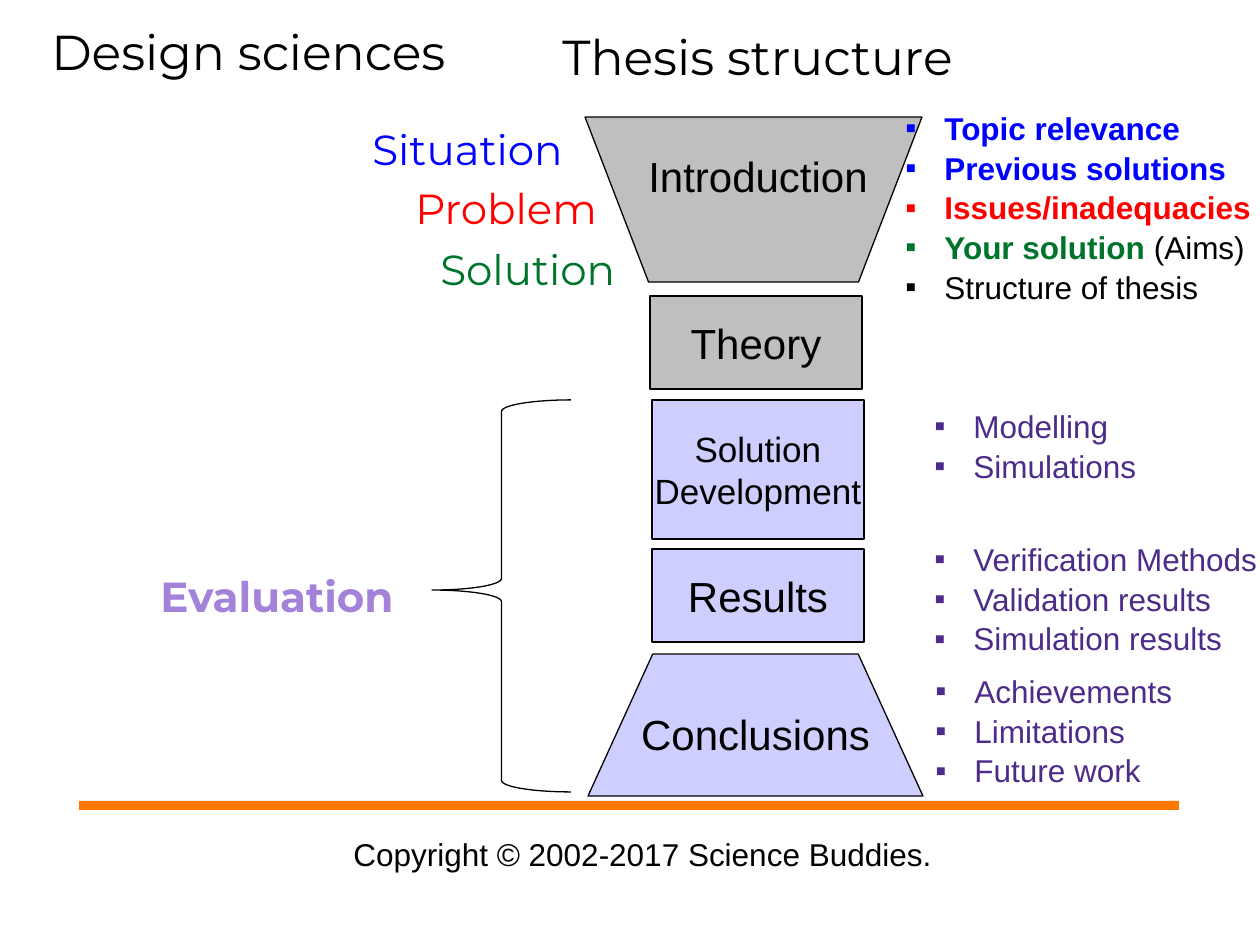
"""Build a slide that maps design-science stages to the structure of a thesis."""
import pptx
import pptx.dml.color
import pptx.enum.shapes
import pptx.enum.text
import pptx.oxml
import pptx.oxml.ns
import pptx.util

SHAPE = pptx.enum.shapes.MSO_SHAPE
ALIGN = pptx.enum.text.PP_ALIGN
ANCHOR = pptx.enum.text.MSO_ANCHOR

PX = 914400 / 126
BULLET_INDENT = 39
BLACK, WHITE, ORANGE = "000000", "FFFFFF", "FF7900"
GREY, LAVENDER = "BFBFBF", "CFCFFF"
BLUE, RED, GREEN = "0000FF", "FF0000", "00742C"
PURPLE, LILAC = "4D2B89", "A283D9"

HEADINGS = [
    ("Design sciences", (39, 15, 467, 72), ALIGN.LEFT),
    ("Thesis structure", (495, 20, 525, 72), ALIGN.CENTER),
]
STAGES = [
    ("Situation", (360, 117, 252, 63), BLUE, False),
    ("Problem", (403, 176, 252, 63), RED, False),
    ("Solution", (428, 237, 252, 63), GREEN, False),
    ("Evaluation", (148, 564, 268, 63), LILAC, True),
]
CHAPTERS = [
    (SHAPE.TRAPEZOID, (585, 117, 337, 165), GREY, "", 24, [0.385], 180),
    (SHAPE.FLOWCHART_PROCESS, (650, 296, 212, 93), GREY, "Theory", 24, [], 0),
    (SHAPE.FLOWCHART_PROCESS, (652, 400, 212, 139), LAVENDER, "Solution\vDevelopment", 20, [], 0),
    (SHAPE.FLOWCHART_PROCESS, (652, 549, 212, 93), LAVENDER, "Results", 24, [], 0),
    (SHAPE.TRAPEZOID, (588, 654, 335, 142), LAVENDER, "Conclusions", 24, [0.456], 0),
    (SHAPE.LEFT_BRACE, (432, 400, 139, 392), WHITE, "", 24, [0.083, 0.485], 0),
]
INTRODUCTION = ("Introduction", (634, 144, 248, 63))
COPYRIGHT = ("Copyright © 2002-2017 Science Buddies.", (341, 829, 617, 50))
BASELINE = (79, 801, 1100, 9)

INTRODUCTION_POINTS = [
    [("Topic relevance", BLUE, True)],
    [("Previous solutions", BLUE, True)],
    [("Issues/inadequacies", RED, True)],
    [("Your solution ", GREEN, True), ("(Aims)", BLACK, False)],
    [("Structure of thesis", BLACK, False)],
]
CHAPTER_POINTS = [
    ((922, 399, 357, 89), ["Modelling", "Simulations"]),
    ((922, 532, 357, 127), ["Verification Methods", "Validation results", "Simulation results"]),
    ((923, 664, 360, 127), ["Achievements", "Limitations", "Future work"]),
]


def px(length):
    return pptx.util.Emu(round(length * PX))


def rgb(value):
    return pptx.dml.color.RGBColor.from_string(value)


def style(font, name, size, color, bold=False):
    font.name = name
    font.size = pptx.util.Pt(size)
    font.bold = bold
    font.color.rgb = rgb(color)


def add_box(slide, place):
    frame = slide.shapes.add_textbox(*map(px, place)).text_frame
    frame.word_wrap = True
    return frame


def add_label(slide, text, place, name, size, color=BLACK, bold=False, align=ALIGN.LEFT):
    paragraph = add_box(slide, place).paragraphs[0]
    paragraph.text = text
    paragraph.alignment = align
    style(paragraph.font, name, size, color, bold)


def add_shape(slide, kind, place, fill, line=BLACK):
    shape = slide.shapes.add_shape(kind, *map(px, place))
    shape.shadow.inherit = False
    shape.fill.solid()
    shape.fill.fore_color.rgb = rgb(fill)
    if line:
        shape.line.color.rgb = rgb(line)
        shape.line.width = pptx.util.Pt(0.75)
    else:
        shape.line.fill.background()
    return shape


def add_chapter(slide, kind, place, fill, text, size, adjustments, rotation):
    shape = add_shape(slide, kind, place, fill)
    shape.rotation = rotation
    for index, value in enumerate(adjustments):
        shape.adjustments[index] = value
    if text:
        frame = shape.text_frame
        frame.word_wrap = False
        frame.vertical_anchor = ANCHOR.MIDDLE
        paragraph = frame.paragraphs[0]
        paragraph.text = text
        paragraph.alignment = ALIGN.CENTER
        style(paragraph.font, "Arial", size, BLACK)


def add_bullet(paragraph):
    properties = paragraph._p.get_or_add_pPr()
    properties.set("marL", str(px(BULLET_INDENT)))
    properties.set("indent", str(-px(BULLET_INDENT)))
    namespace = pptx.oxml.ns.nsdecls("a")
    for tag in ('buFont {} typeface="Arial"', 'buChar {} char="▪"'):
        properties.append(pptx.oxml.parse_xml(f"<a:{tag.format(namespace)}/>"))
    paragraph.line_spacing = 1.05


def add_points(slide, place, points):
    frame = add_box(slide, place)
    for index, parts in enumerate(points):
        paragraph = frame.add_paragraph() if index else frame.paragraphs[0]
        add_bullet(paragraph)
        style(paragraph.font, "Arial", 18, *parts[0][1:])
        for text, color, bold in parts:
            run = paragraph.add_run()
            run.text = text
            if len(parts) > 1:
                style(run.font, "Arial", 18, color, bold)


def main():
    deck = pptx.Presentation()
    deck.slide_width, deck.slide_height = px(1260), px(945)
    slide = deck.slides.add_slide(deck.slide_layouts[6])

    add_shape(slide, SHAPE.RECTANGLE, BASELINE, ORANGE, None)
    for text, place, align in HEADINGS:
        add_label(slide, text, place, "Montserrat", 28, align=align)
    add_label(slide, *COPYRIGHT, "Arial", 18)
    for chapter in CHAPTERS:
        add_chapter(slide, *chapter)
    add_label(slide, *INTRODUCTION, "Arial", 24, align=ALIGN.CENTER)
    add_points(slide, (893, 101, 386, 204), INTRODUCTION_POINTS)
    for place, points in CHAPTER_POINTS:
        add_points(slide, place, [[(text, PURPLE, False)] for text in points])
    for text, place, color, bold in STAGES:
        add_label(slide, text, place, "Montserrat", 24, color, bold)

    deck.save("out.pptx")


if __name__ == "__main__":
    main()
